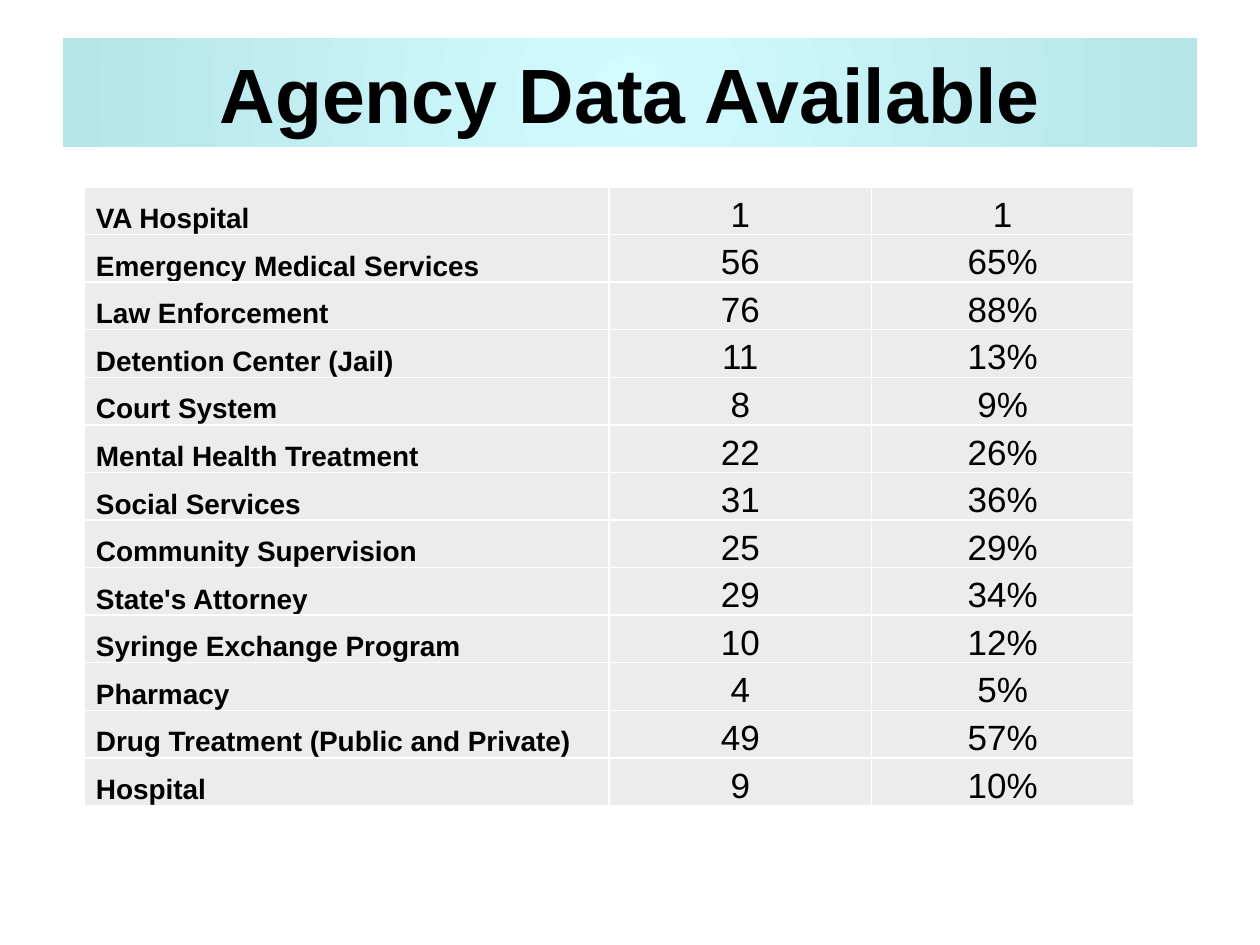
from lxml import etree
from pptx import Presentation
from pptx.dml.color import RGBColor
from pptx.enum.text import MSO_ANCHOR, MSO_AUTO_SIZE, PP_ALIGN
from pptx.oxml import parse_xml
from pptx.oxml.ns import nsdecls, qn
from pptx.util import Pt

PX = 914400 / 126
LEFT, CENTER = PP_ALIGN.LEFT, PP_ALIGN.CENTER
BOTTOM, MIDDLE = MSO_ANCHOR.BOTTOM, MSO_ANCHOR.MIDDLE
NO_FIT = MSO_AUTO_SIZE.NONE

AGENCIES = [
    ("VA Hospital", "1", "1"),
    ("Emergency Medical Services", "56", "65%"),
    ("Law Enforcement", "76", "88%"),
    ("Detention Center (Jail)", "11", "13%"),
    ("Court System", "8", "9%"),
    ("Mental Health Treatment", "22", "26%"),
    ("Social Services", "31", "36%"),
    ("Community Supervision", "25", "29%"),
    ("State's Attorney", "29", "34%"),
    ("Syringe Exchange Program", "10", "12%"),
    ("Pharmacy", "4", "5%"),
    ("Drug Treatment (Public and Private)", "49", "57%"),
    ("Hospital", "9", "10%"),
]


def px(n):
    return round(n * PX)


def color(value):
    return RGBColor.from_string(value)


def add_text(tf, text, size, bold, align):
    p = tf.paragraphs[0]
    p.alignment = align
    r = p.add_run()
    r.text = text
    r.font.name = "Arial"
    r.font.size = Pt(size)
    r.font.bold = bold
    r.font.color.rgb = color("000000")


def radial_fill(fill, inner, outer):
    fill.gradient()
    for stop, position, value in zip(fill.gradient_stops, (0, 1), (inner, outer)):
        stop.position = position
        stop.color.rgb = color(value)


def add_title(s, x, y, w, h):
    sp = s.shapes.title
    sp.left, sp.top, sp.width, sp.height = px(x), px(y), px(w), px(h)
    radial_fill(sp.fill, "D3FBFF", "B5E5E9")
    # Turn the linear gradient into one spreading from the centre
    grad = sp._element.spPr.find(qn("a:gradFill"))
    lin = grad.find(qn("a:lin"))
    circle = parse_xml(
        f'<a:path {nsdecls("a")} path="circle">'
        '<a:fillToRect l="50000" t="50000" r="50000" b="50000"/></a:path>')
    grad.replace(lin, circle)
    tf = sp.text_frame
    tf.word_wrap = True
    tf.auto_size = NO_FIT
    tf.vertical_anchor = MIDDLE
    add_text(tf, "Agency Data Available", 44, True, CENTER)


def add_borders(cell, value, width):
    tcPr = cell._tc.get_or_add_tcPr()
    for i, side in enumerate(("lnL", "lnR", "lnT", "lnB")):
        ln = etree.Element(qn(f"a:{side}"), w=str(Pt(width)))
        fill = etree.SubElement(ln, qn("a:solidFill"))
        etree.SubElement(fill, qn("a:srgbClr"), val=value)
        tcPr.insert(i, ln)


def add_column(s, x, y, w, h, texts, size, bold, align, inset):
    table = s.shapes.add_table(len(texts), 1, px(x), px(y), px(w), px(h)).table
    table.first_row = table.horz_banding = False
    for i, text in enumerate(texts):
        table.rows[i].height = px(h / len(texts))
        cell = table.cell(i, 0)
        cell.fill.solid()
        cell.fill.fore_color.rgb = color("ECECEC")
        cell.margin_left = px(inset)
        cell.margin_right = cell.margin_top = cell.margin_bottom = 0
        cell.vertical_anchor = BOTTOM
        add_text(cell.text_frame, text, size, bold, align)
        add_borders(cell, "FFFFFF", 1)


def add_agency_data(s, x, y, w, h):
    # Names take half the width, counts and shares a quarter each
    names, counts, shares = zip(*AGENCIES)
    half, quarter = w / 2, w / 4
    add_column(s, x, y, half, h, names, 16, True, LEFT, 12)
    add_column(s, x + half, y, quarter, h, counts, 20, False, CENTER, 0)
    add_column(s, x + half + quarter, y, quarter, h, shares, 20, False, CENTER, 0)


def main():
    prs = Presentation()
    prs.slide_width, prs.slide_height = px(1260), px(945)
    s = prs.slides.add_slide(prs.slide_layouts[5])
    add_title(s, 63, 38, 1134, 109)
    add_agency_data(s, 84, 187, 1050, 619)
    prs.save("out.pptx")


if __name__ == "__main__":
    main()
